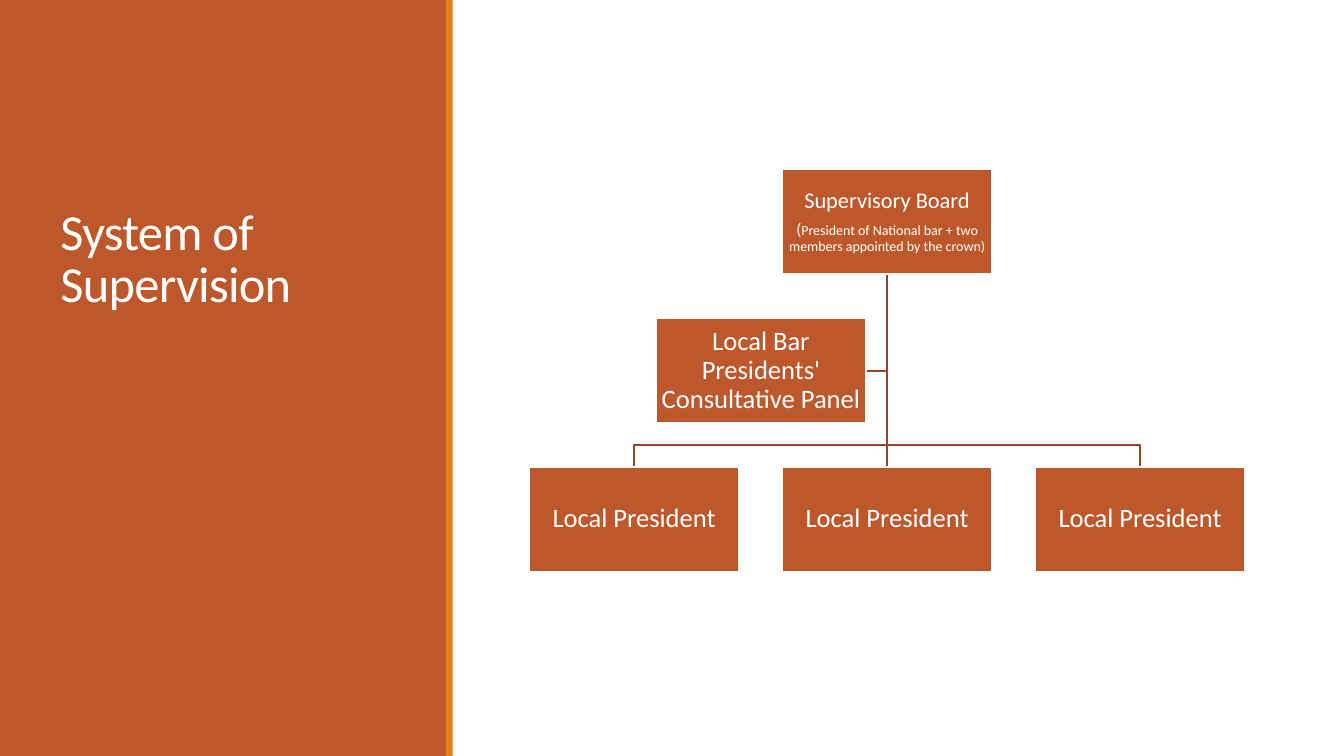
from itertools import pairwise
from lxml import etree
from pptx import Presentation
from pptx.dml.color import RGBColor
from pptx.enum import shapes, text
from pptx.oxml import ns
from pptx.util import Pt

RUST, ORANGE, BROWN, WHITE = "BD582C", "E48312", "974623", "FFFFFF"
FONT = "Calibri"
HEADING = "System of Supervision"
BOARD = [
    [("Supervisory Board", 16)],
    [("(", 12), ("President of National bar + two members appointed by the crown)", 10)],
]
PANEL = [[("Local Bar Presidents' Consultative Panel", 19)]]
PRESIDENTS = [[[("Local President", 19)]]] * 3

SLIDE_W, SLIDE_H = 960, 540
BOX_W, BOX_H = 149.8, 74.9
CENTRE, PITCH = 633.6, 180.7
BOARD_TOP, PANEL_LEFT, PANEL_TOP, PRESIDENT_TOP = 121, 468.6, 227.5, 333.4
BUS_Y = 317.6


def colour(hex_code):
    return RGBColor.from_string(hex_code)


def add_run(paragraph, words, size):
    run = paragraph.add_run()
    run.text = words
    run.font.name = FONT
    run.font.size = Pt(size)
    run.font.color.rgb = colour(WHITE)
    return run


def add_rect(left, top, width, height, fill, outline=None):
    rect = slide.shapes.add_shape(
        shapes.MSO_SHAPE.RECTANGLE, Pt(left), Pt(top), Pt(width), Pt(height))
    rect.shadow.inherit = False
    rect.fill.solid()
    rect.fill.fore_color.rgb = colour(fill)
    if outline:
        rect.line.color.rgb = colour(outline)
        rect.line.width = Pt(1.25)
    else:
        rect.line.fill.background()
    return rect


def add_box(left, top, paragraphs):
    frame = add_rect(left, top, BOX_W, BOX_H, RUST, WHITE).text_frame
    frame.word_wrap = True
    frame.vertical_anchor = text.MSO_ANCHOR.MIDDLE
    frame.margin_left = frame.margin_right = Pt(0.8)
    frame.margin_top = frame.margin_bottom = Pt(0.8)
    for index, runs in enumerate(paragraphs):
        paragraph = frame.add_paragraph() if index else frame.paragraphs[0]
        paragraph.alignment = text.PP_ALIGN.CENTER
        paragraph.line_spacing = 0.9
        paragraph.space_after = Pt(0.35 * runs[0][1])
        for words, size in runs:
            add_run(paragraph, words, size)


def add_link(points):
    corners = [(Pt(x), Pt(y)) for x, y in points]
    if len(corners) == 2:
        link = slide.shapes.add_connector(
            shapes.MSO_CONNECTOR.STRAIGHT, *corners[0], *corners[1])
    else:
        outline = slide.shapes.build_freeform(*corners[0], scale=1.0)
        outline.add_line_segments(corners[1:], close=False)
        link = outline.convert_to_shape()
        link.fill.background()
    link.line.color.rgb = colour(BROWN)
    link.line.width = Pt(1.25)
    etree.SubElement(link._element.spPr, ns.qn("a:effectLst"))


deck = Presentation()
deck.slide_width, deck.slide_height = Pt(SLIDE_W), Pt(SLIDE_H)
slide = deck.slides.add_slide(deck.slide_layouts[5])

add_rect(0, 0, 319, SLIDE_H, RUST)
add_rect(318.4, 0, 5, SLIDE_H, ORANGE)

heading = slide.shapes.title
slide.shapes._spTree.append(heading._element)
heading.left, heading.top, heading.width, heading.height = Pt(36), Pt(46.8), Pt(252), Pt(180)
heading.text_frame.word_wrap = True
heading.text_frame.auto_size = text.MSO_AUTO_SIZE.NONE
heading.text_frame.vertical_anchor = text.MSO_ANCHOR.BOTTOM
heading_line = heading.text_frame.paragraphs[0]
heading_line.alignment = text.PP_ALIGN.LEFT
heading_line.line_spacing = 0.85
add_run(heading_line, HEADING, 36).font._element.set("spc", "-50")

board_bottom = BOARD_TOP + BOX_H
panel_middle = PANEL_TOP + BOX_H / 2
president_centres = [CENTRE + (i - 1) * PITCH for i in range(len(PRESIDENTS))]

add_link([(CENTRE, board_bottom), (CENTRE, panel_middle), (PANEL_LEFT + BOX_W, panel_middle)])
for centre in president_centres:
    bends = [(CENTRE, BUS_Y), (centre, BUS_Y)] if centre != CENTRE else []
    add_link([(CENTRE, board_bottom), *bends, (centre, PRESIDENT_TOP)])

add_box(CENTRE - BOX_W / 2, BOARD_TOP, BOARD)
for centre, president in zip(president_centres, PRESIDENTS):
    add_box(centre - BOX_W / 2, PRESIDENT_TOP, president)
add_box(PANEL_LEFT, PANEL_TOP, PANEL)

deck.save("out.pptx")
